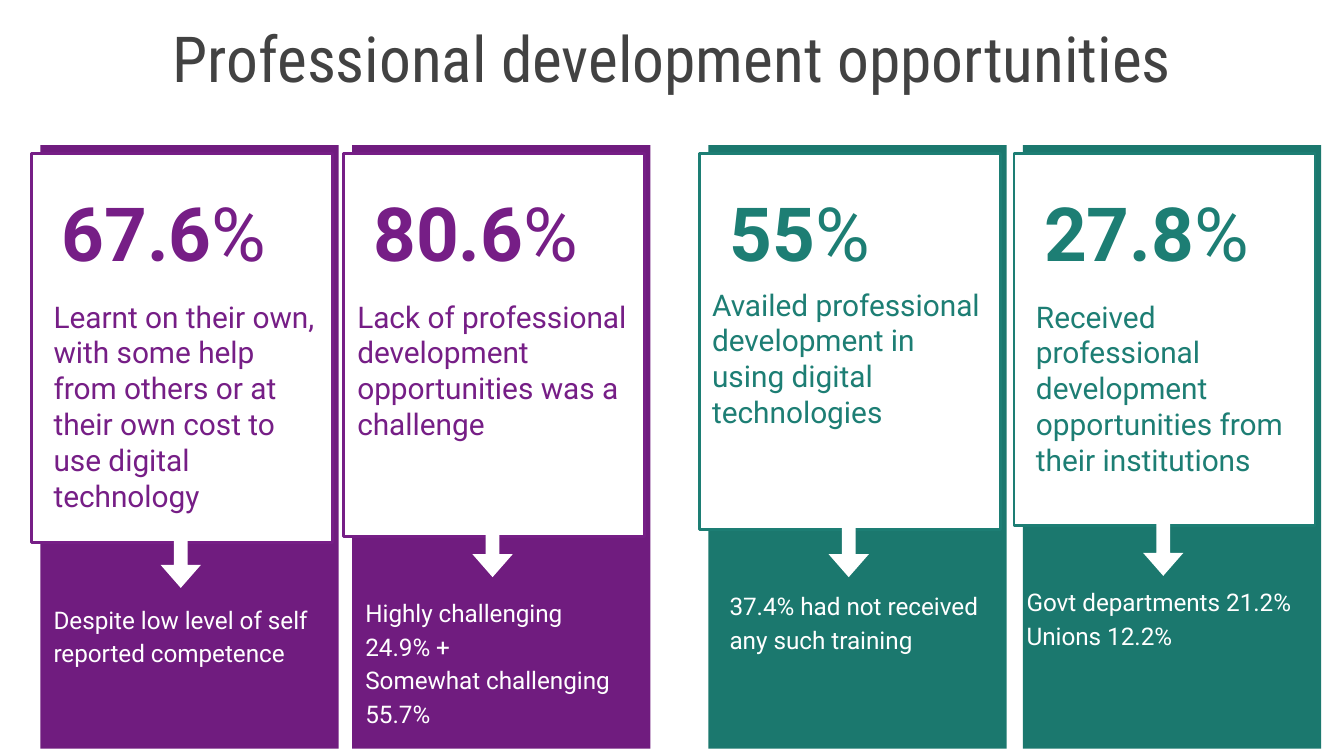
from collections import namedtuple

from pptx import Presentation
from pptx import util as u
from pptx.dml.color import RGBColor
from pptx.enum import shapes, text

PURPLE_DARK = RGBColor(0x70, 0x1C, 0x7F)
PURPLE = RGBColor(0x76, 0x1E, 0x86)
TEAL_DARK = RGBColor(0x1B, 0x78, 0x6E)
TEAL = RGBColor(0x1D, 0x7E, 0x74)
WHITE = RGBColor(0xFF, 0xFF, 0xFF)
GREY = RGBColor(0x42, 0x42, 0x42)

WIDTH, HEIGHT = u.Inches(10), u.Inches(5.625)
COLUMN, ROW = WIDTH / 100, HEIGHT / 56.25

HEADLINE = {"name": "Roboto Condensed", "size": u.Pt(34)}
FIGURE = {"name": "Roboto", "size": u.Pt(40), "bold": True}
UNIT = {"name": "Roboto", "size": u.Pt(40), "bold": False}
FINDING = {"name": "Roboto", "size": u.Pt(16)}
DETAIL = {"name": "Roboto", "size": u.Pt(13)}

Box = namedtuple("Box", "left top width height")
Card = namedtuple(
    "Card", "left panel_height arrow_top finding_box detail_shift "
    "dark accent figure finding details")

CARD_TOP, CARD_WIDTH, CARD_HEIGHT = 10.8, 22.2, 44.9
PANEL_TOP, PANEL_WIDTH, PANEL_SHIFT = 11.4, 22.4, -0.65

CARDS = [
    Card(3, 29, 40.1, Box(0, 21.2, 21.5, 17.6), 0, PURPLE_DARK, PURPLE, "67.6",
         "Learnt on their own, with some help from others or at their own "
         "cost to use digital technology",
         ["Despite low level of self reported competence"]),
    Card(26.2, 28.5, 39.3, Box(-0.6, 21.2, 22.2, 13.7), 0, PURPLE_DARK, PURPLE, "80.6",
         "Lack of professional development opportunities was a challenge",
         ["Highly challenging 24.9% +", "Somewhat challenging 55.7%"]),
    Card(52.7, 28, 39.3, Box(-0.7, 20.3, 22.2, 15.9), 0.6, TEAL_DARK, TEAL, "55",
         "Availed professional development in using digital technologies",
         ["37.4% had not received any such training"]),
    Card(76.1, 27.7, 39.2, Box(0, 21.2, 21.5, 15.3), -0.7, TEAL_DARK, TEAL, "27.8",
         "Received professional development opportunities from their institutions",
         ["Govt departments 21.2%", "Unions 12.2%"]),
]


def place(box):
    return [round(length * step)
            for length, step in zip(box, (COLUMN, ROW, COLUMN, ROW))]


def add_block(slide, preset, box, fill, outline=None):
    block = slide.shapes.add_shape(preset, *place(box))
    block.shadow.inherit = False
    block.fill.solid()
    block.fill.fore_color.rgb = fill
    if outline is None:
        block.line.fill.background()
    else:
        block.line.color.rgb = outline
        block.line.width = u.Pt(1.5)
    return block


def add_copy(slide, box, paragraphs, color, spacing=1.0,
             align=text.PP_ALIGN.LEFT, anchor=text.MSO_ANCHOR.TOP):
    frame = slide.shapes.add_textbox(*place(box)).text_frame
    margin = u.Inches(0.1)
    settings = {"word_wrap": True, "vertical_anchor": anchor,
                "margin_left": margin, "margin_right": margin,
                "margin_top": margin, "margin_bottom": margin}
    for key, value in settings.items():
        setattr(frame, key, value)
    for index, runs in enumerate(paragraphs):
        paragraph = frame.add_paragraph() if index else frame.paragraphs[0]
        paragraph.alignment = align
        paragraph.line_spacing = spacing
        for words, style in runs:
            run = paragraph.add_run()
            run.text = words
            run.font.color.rgb = color
            for key, value in style.items():
                setattr(run.font, key, value)


def add_headline(slide, box):
    add_copy(slide, box, [[("Professional development opportunities", HEADLINE)]],
             GREY, 1.15, text.PP_ALIGN.CENTER, text.MSO_ANCHOR.BOTTOM)


def add_card(slide, card, box):
    rectangle = shapes.MSO_SHAPE.RECTANGLE
    add_block(slide, rectangle, box, card.dark)
    panel = Box(box.left + PANEL_SHIFT, PANEL_TOP, PANEL_WIDTH, card.panel_height)
    add_block(slide, rectangle, panel, WHITE, card.accent)

    finding_box = card.finding_box._replace(left=box.left + card.finding_box.left)
    add_copy(slide, finding_box, [[(card.finding, FINDING)]], card.accent)
    add_copy(slide, Box(box.left + 0.6, 12.9, 19.8, 7.4),
             [[(card.figure, FIGURE), ("%", UNIT)]], card.accent)

    arrow = add_block(slide, shapes.MSO_SHAPE.RIGHT_ARROW,
                      Box(box.left + 8.3, card.arrow_top, 4.3, 3), WHITE)
    arrow.rotation = 90
    arrow.adjustments[0], arrow.adjustments[1] = 0.34, 0.57

    detail_top = panel.top + panel.height + 3.3
    detail_width = 22.2 if card.detail_shift < 0 else 21.5
    detail_box = Box(box.left + card.detail_shift, detail_top, detail_width, 12)
    add_copy(slide, detail_box, [[(line, DETAIL)] for line in card.details],
             WHITE, 1.15)


def main():
    deck = Presentation()
    deck.slide_width, deck.slide_height = WIDTH, HEIGHT
    slide = deck.slides.add_slide(deck.slide_layouts[6])
    add_headline(slide, Box(1, 0.8, 98, 7.3))
    for card in CARDS:
        add_card(slide, card, Box(card.left, CARD_TOP, CARD_WIDTH, CARD_HEIGHT))
    deck.save("out.pptx")


if __name__ == "__main__":
    main()
